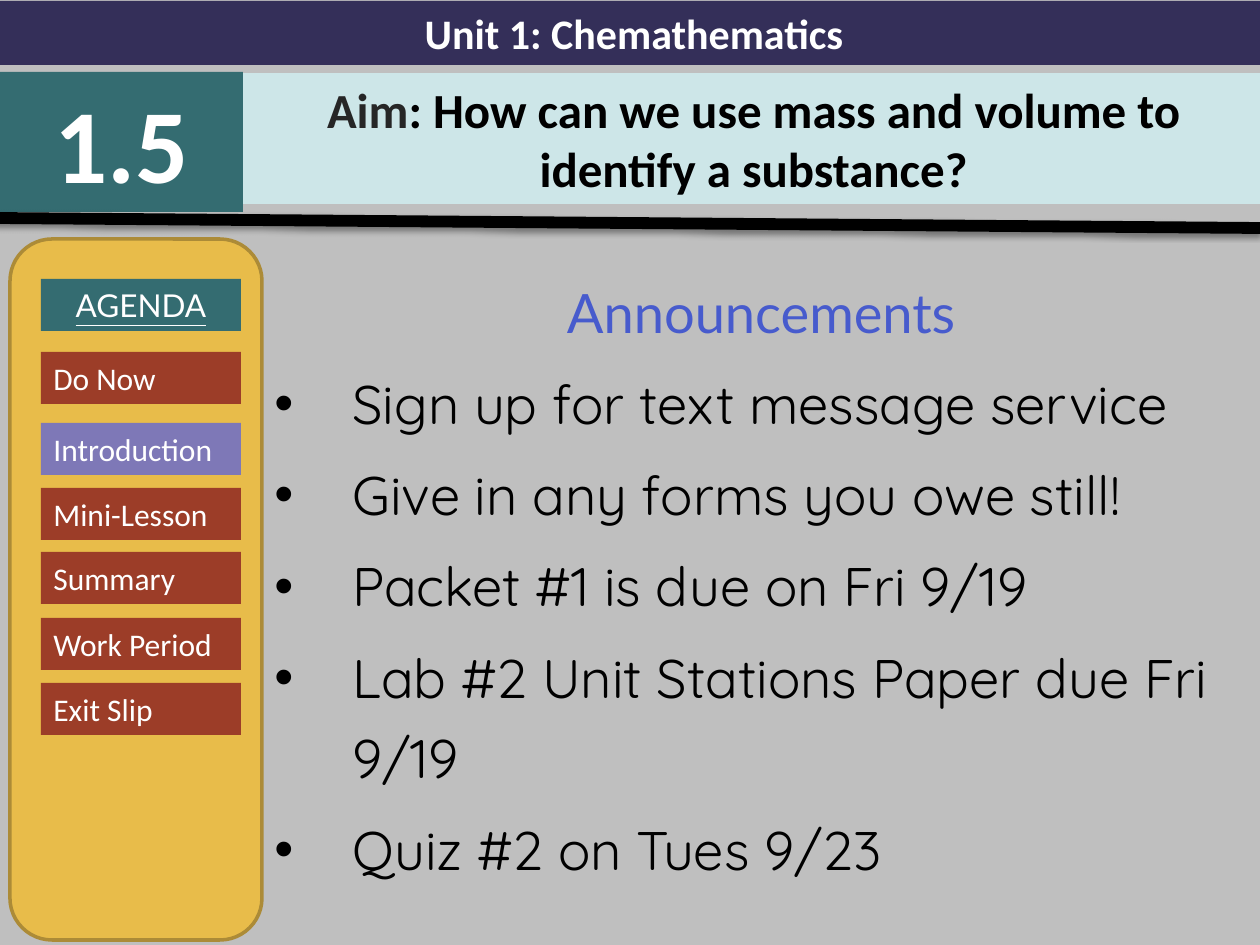
from dataclasses import dataclass

from lxml import etree
from pptx import Presentation
from pptx import util as u
from pptx.dml.color import RGBColor
from pptx.enum import shapes, text
from pptx.oxml import ns

EMU_PER_PX = 914400 / 126


@dataclass(frozen=True)
class Theme:
    background: str = "BFBFBF"
    navy: str = "342F59"
    teal: str = "346C71"
    pale: str = "CDE6E8"
    gold: str = "E8BC4A"
    gold_edge: str = "AC8B37"
    brick: str = "9C3D28"
    current: str = "7E78B7"
    heading: str = "475BCD"
    white: str = "FFFFFF"
    black: str = "000000"
    charcoal: str = "262626"
    number_size: int = 60
    body_size: int = 31
    aim_size: int = 28
    unit_size: int = 24
    agenda_size: int = 18


@dataclass(frozen=True)
class Box:
    left: int
    top: int
    width: int
    height: int

    def emu(self) -> tuple[u.Emu, ...]:
        return tuple(px(n) for n in (self.left, self.top, self.width, self.height))


@dataclass(frozen=True)
class Style:
    size: int
    color: str
    font: str = "Calibri"
    bold: bool = False
    underline: bool = False


@dataclass(frozen=True)
class Panel:
    box: Box
    fill: str
    label: str
    style: Style
    align: text.PP_ALIGN = text.PP_ALIGN.CENTER


THEME = Theme()
LABEL = Style(THEME.agenda_size, THEME.white)
AGENDA = (
    ("Do Now", 352),
    ("Introduction", 423),
    ("Mini-Lesson", 488),
    ("Summary", 552),
    ("Work Period", 618),
    ("Exit Slip", 683),
)
ANNOUNCEMENTS = (
    "Sign up for text message service",
    "Give in any forms you owe still!",
    "Packet #1 is due on Fri 9/19",
    "Lab #2 Unit Stations Paper due Fri 9/19",
    "Quiz #2 on Tues 9/23",
)


def px(n: int) -> u.Emu:
    return u.Emu(round(n * EMU_PER_PX))


def paint(fill, color: str) -> None:
    fill.solid()
    fill.fore_color.rgb = RGBColor.from_string(color)


def add_run(paragraph, words: str, style: Style) -> None:
    run = paragraph.add_run()
    run.text = words
    run.font.size = u.Pt(style.size)
    run.font.name = style.font
    run.font.bold = style.bold
    run.font.underline = style.underline
    run.font.color.rgb = RGBColor.from_string(style.color)


def add_block(slide, kind, box: Box, fill: str):
    block = slide.shapes.add_shape(kind, *box.emu())
    block.shadow.inherit = False
    paint(block.fill, fill)
    block.line.fill.background()
    return block


def add_panel(slide, panel: Panel) -> None:
    block = add_block(slide, shapes.MSO_SHAPE.RECTANGLE, panel.box, panel.fill)
    frame = block.text_frame
    frame.word_wrap = True
    frame.vertical_anchor = text.MSO_ANCHOR.MIDDLE
    frame.paragraphs[0].alignment = panel.align
    add_run(frame.paragraphs[0], panel.label, panel.style)


def add_aim(slide) -> None:
    title = slide.shapes.title
    title.left, title.top, title.width, title.height = Box(243, 73, 1021, 131).emu()
    paint(title.fill, THEME.pale)
    frame = title.text_frame
    frame.auto_size = text.MSO_AUTO_SIZE.NONE
    frame.vertical_anchor = text.MSO_ANCHOR.MIDDLE
    aim = frame.paragraphs[0]
    aim.alignment = text.PP_ALIGN.CENTER
    add_run(aim, "Aim", Style(THEME.aim_size, THEME.charcoal, bold=True))
    add_run(aim, ": How can we use mass and volume to identify a substance?",
            Style(THEME.aim_size, THEME.black, bold=True))


def add_bullet(paragraph, indent: int) -> None:
    properties = paragraph._p.get_or_add_pPr()
    properties.set("marL", str(px(indent)))
    properties.set("indent", str(-px(indent)))
    etree.SubElement(properties, ns.qn("a:buFont"), typeface="Arial")
    etree.SubElement(properties, ns.qn("a:buChar"), char="•")


def add_announcements(slide) -> None:
    frame = slide.shapes.add_textbox(*Box(262, 257, 998, 688).emu()).text_frame
    frame.word_wrap = True
    heading = frame.paragraphs[0]
    heading.alignment = text.PP_ALIGN.CENTER
    add_run(heading, "Announcements", Style(THEME.body_size, THEME.heading, "Lato"))
    for announcement in ANNOUNCEMENTS:
        item = frame.add_paragraph()
        add_run(item, announcement, Style(THEME.body_size, THEME.black, "Quicksand"))
    for paragraph in frame.paragraphs:
        paragraph.line_spacing = 1.24
        paragraph.space_before = u.Pt(6)
    for item in frame.paragraphs[1:]:
        add_bullet(item, 78)


def add_divider(slide) -> None:
    divider = slide.shapes.add_connector(
        shapes.MSO_CONNECTOR.STRAIGHT, px(-6), px(218), px(1260), px(228))
    divider.line.width = u.Pt(6.75)
    paint(divider.line.fill, THEME.black)
    effects = etree.SubElement(divider._element.spPr, ns.qn("a:effectLst"))
    shadow = etree.SubElement(
        effects, ns.qn("a:outerShdw"), blurRad=str(u.Pt(3.1)), dist=str(u.Pt(1.6)),
        dir="5400000", rotWithShape="0")
    tint = etree.SubElement(shadow, ns.qn("a:srgbClr"), val=THEME.black)
    etree.SubElement(tint, ns.qn("a:alpha"), val="38000")


def add_agenda(slide) -> None:
    card = add_block(slide, shapes.MSO_SHAPE.ROUNDED_RECTANGLE,
                     Box(10, 239, 252, 701), THEME.gold)
    paint(card.line.fill, THEME.gold_edge)
    card.line.width = u.Pt(2)
    add_panel(slide, Panel(Box(41, 279, 200, 52), THEME.teal, "AGENDA",
                           Style(THEME.agenda_size, THEME.white, "Lato", underline=True)))
    for label, top in AGENDA:
        fill = THEME.current if label == "Introduction" else THEME.brick
        add_panel(slide, Panel(Box(41, top, 200, 52), fill, label, LABEL,
                               text.PP_ALIGN.LEFT))


def main() -> None:
    deck = Presentation()
    deck.slide_width, deck.slide_height = px(1260), px(945)
    slide = deck.slides.add_slide(deck.slide_layouts.get_by_name("Title Only"))
    paint(slide.background.fill, THEME.background)
    add_announcements(slide)
    add_panel(slide, Panel(Box(0, 1, 1268, 64), THEME.navy, "Unit 1: Chemathematics",
                           Style(THEME.unit_size, THEME.white, bold=True)))
    add_panel(slide, Panel(Box(0, 72, 243, 140), THEME.teal, "1.5",
                           Style(THEME.number_size, THEME.white, bold=True)))
    add_aim(slide)
    add_divider(slide)
    add_agenda(slide)
    deck.save("out.pptx")


if __name__ == "__main__":
    main()
